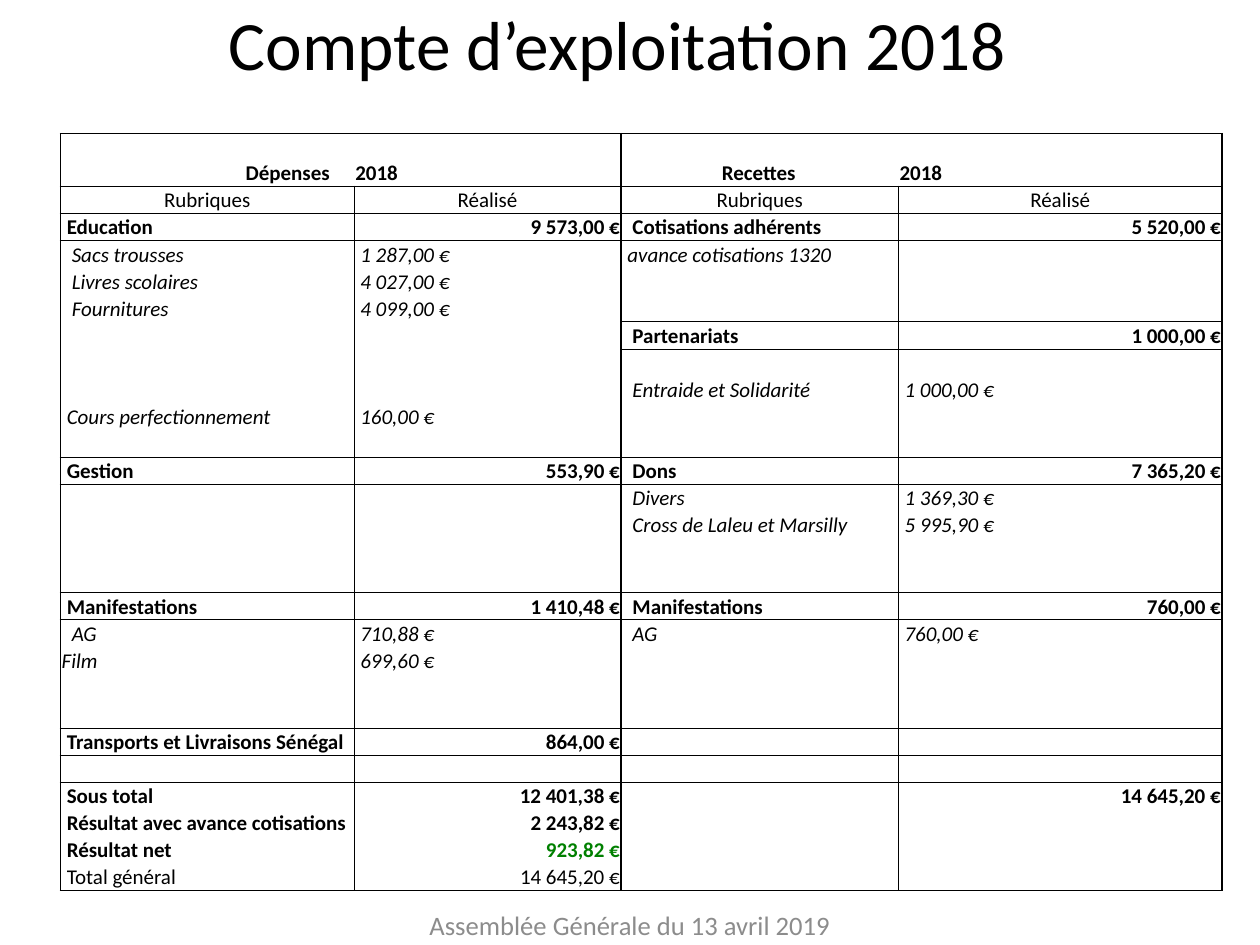
"""Build the 2018 operating account slide of the association."""

from dataclasses import dataclass
from enum import Enum
from itertools import chain
from typing import Optional

from lxml.etree import SubElement
from pptx import Presentation
from pptx.dml.color import RGBColor
from pptx.enum.text import MSO_ANCHOR as Anchor, PP_ALIGN as Align
from pptx.oxml.ns import qn
from pptx.util import Inches, Pt

BLACK = RGBColor(0x00, 0x00, 0x00)
GREY = RGBColor(0x8C, 0x8C, 0x8C)
GREEN = RGBColor(0x00, 0x80, 0x00)
FONT = "Calibri"
BODY_SIZE = 12
WIDTH, HEIGHT = Inches(10), Inches(7.5)
INDENT_STEP = 0.04
OUTER_LINE, INNER_LINE = 1, 0.5
COLUMN_SHARES = (23.3, 21.2, 22, 25.7)
HEADING_SHARE, ENTRY_SHARE = 5.6, 2.87


class Kind(Enum):
    HEADING = "heading"
    COLUMNS = "columns"
    SECTION = "section"
    DETAIL = "detail"
    TOTAL = "total"
    GRAND_TOTAL = "grand total"


RULED = {Kind.COLUMNS, Kind.SECTION}
BOLD = {Kind.HEADING, Kind.SECTION, Kind.TOTAL}


@dataclass(frozen=True)
class Entry:
    kind: Kind = Kind.DETAIL
    label: str = ""
    amount: str = ""
    indent: float = 2
    colour: RGBColor = BLACK


@dataclass(frozen=True)
class Caption:
    text: str
    area: tuple[float, float, float, float]
    size: float
    colour: RGBColor
    anchor: Anchor


BLANK = Entry()
RULED_BLANK = Entry(Kind.SECTION)
COLUMN_NAMES = Entry(Kind.COLUMNS, "Rubriques", "Réalisé", 0)

EXPENSES = [
    Entry(Kind.HEADING, "Dépenses", "2018", 36.5),
    COLUMN_NAMES,
    Entry(Kind.SECTION, "Education", "9 573,00 €", 1),
    Entry(Kind.DETAIL, "Sacs trousses", "1 287,00 €"),
    Entry(Kind.DETAIL, "Livres scolaires", "4 027,00 €"),
    Entry(Kind.DETAIL, "Fournitures", "4 099,00 €"),
    *[BLANK] * 3,
    Entry(Kind.DETAIL, "Cours perfectionnement", "160,00 €", 1),
    BLANK,
    Entry(Kind.SECTION, "Gestion", "553,90 €", 1),
    *[BLANK] * 4,
    Entry(Kind.SECTION, "Manifestations", "1 410,48 €", 1),
    Entry(Kind.DETAIL, "AG", "710,88 €"),
    Entry(Kind.DETAIL, "Film", "699,60 €", 0),
    *[BLANK] * 2,
    Entry(Kind.SECTION, "Transports et Livraisons Sénégal", "864,00 €", 1),
    RULED_BLANK,
    Entry(Kind.TOTAL, "Sous total", "12 401,38 €", 1),
    Entry(Kind.TOTAL, "Résultat avec avance cotisations", "2 243,82 €", 1),
    Entry(Kind.TOTAL, "Résultat net", "923,82 €", 1, GREEN),
    Entry(Kind.GRAND_TOTAL, "Total général", "14 645,20 €", 1),
]

INCOME = [
    Entry(Kind.HEADING, "Recettes", "2018", 19.75),
    COLUMN_NAMES,
    Entry(Kind.SECTION, "Cotisations adhérents", "5 520,00 €"),
    Entry(Kind.DETAIL, "avance cotisations 1320", "", 1),
    *[BLANK] * 2,
    Entry(Kind.SECTION, "Partenariats", "1 000,00 €"),
    BLANK,
    Entry(Kind.DETAIL, "Entraide et Solidarité", "1 000,00 €"),
    *[BLANK] * 2,
    Entry(Kind.SECTION, "Dons", "7 365,20 €"),
    Entry(Kind.DETAIL, "Divers", "1 369,30 €"),
    Entry(Kind.DETAIL, "Cross de Laleu et Marsilly", "5 995,90 €"),
    *[BLANK] * 2,
    Entry(Kind.SECTION, "Manifestations", "760,00 €"),
    Entry(Kind.DETAIL, "AG", "760,00 €"),
    *[BLANK] * 3,
    *[RULED_BLANK] * 2,
    Entry(Kind.TOTAL, "", "14 645,20 €"),
    *[BLANK] * 3,
]

CAPTIONS = [
    Caption("Compte d’exploitation 2018", (6.5, 0, 85, 9), 39.6, BLACK, Anchor.MIDDLE),
    Caption("Assemblée Générale du 13 avril 2019", (15, 95.5, 70, 4.3), 15.2, GREY, Anchor.TOP),
]


def across(percent: float) -> int:
    """Return a percentage of the slide's width."""
    return int(WIDTH * percent / 100)


def down(percent: float) -> int:
    """Return a percentage of the slide's height."""
    return int(HEIGHT * percent / 100)


def add_run(paragraph, text: str, size: float, colour: RGBColor,
            bold: bool = False, italic: bool = False) -> None:
    """Append one formatted run to a paragraph."""
    run = paragraph.add_run()
    run.text = text
    font = run.font
    font.name, font.size, font.bold, font.italic = FONT, Pt(size), bold, italic
    font.color.rgb = colour


def add_caption(slide, caption: Caption) -> None:
    """Draw a centred line of text."""
    left, top, width, height = caption.area
    box = slide.shapes.add_textbox(across(left), down(top), across(width), down(height))
    frame = box.text_frame
    frame.word_wrap = True
    frame.vertical_anchor = caption.anchor
    paragraph = frame.paragraphs[0]
    paragraph.alignment = Align.CENTER
    add_run(paragraph, caption.text, caption.size, caption.colour)


def set_border(cell, side: str, points: Optional[float]) -> None:
    """Rule one side of a cell, or clear it when no width is given."""
    line = SubElement(cell._tc.get_or_add_tcPr(), qn(f"a:ln{side}"))
    if not points:
        SubElement(line, qn("a:noFill"))
        return
    line.set("w", str(Pt(points)))
    fill = SubElement(line, qn("a:solidFill"))
    SubElement(fill, qn("a:srgbClr")).set("val", str(BLACK))


def rule_width(entries: list[Entry], row: int) -> Optional[float]:
    """Return the width of the rule above a row, the end of the table included."""
    if row in (0, 1, len(entries)):
        return OUTER_LINE
    touching = {entry.kind for entry in entries[row - 1:row + 1]}
    return INNER_LINE if touching & RULED else None


def fill_cell(cell, entry: Entry, is_amount: bool) -> None:
    """Write the label or the amount of an entry into its cell."""
    cell.margin_left = cell.margin_right = cell.margin_top = Inches(0.01)
    cell.margin_bottom = 0
    cell.vertical_anchor = Anchor.BOTTOM
    paragraph = cell.text_frame.paragraphs[0]
    text = entry.amount if is_amount else entry.label
    if not text:
        SubElement(paragraph._p, qn("a:endParaRPr")).set("sz", str(BODY_SIZE * 100))
        return
    indent = entry.indent
    if is_amount:
        indent = 1 if entry.kind is Kind.DETAIL else 0
    if entry.kind is Kind.COLUMNS:
        paragraph.alignment = Align.CENTER
    elif is_amount and entry.kind not in (Kind.HEADING, Kind.DETAIL):
        paragraph.alignment = Align.RIGHT
    else:
        paragraph.alignment = Align.LEFT
        paragraph._p.get_or_add_pPr().set("marL", str(Inches(indent * INDENT_STEP)))
    add_run(paragraph, text, BODY_SIZE, entry.colour if is_amount else BLACK,
            entry.kind in BOLD, entry.kind is Kind.DETAIL)


def add_account(slide) -> None:
    """Draw the table of expenses and income side by side."""
    heights = [HEADING_SHARE] + [ENTRY_SHARE] * (len(EXPENSES) - 1)
    table = slide.shapes.add_table(
        len(heights), len(COLUMN_SHARES), across(4.8), down(14.13),
        across(sum(COLUMN_SHARES)), down(sum(heights))).table
    table.first_row = table.horz_banding = False
    for column, share in zip(table.columns, COLUMN_SHARES):
        column.width = across(share)
    for table_row, share in zip(table.rows, heights):
        table_row.height = down(share)
    halves = ((half, row, entries) for half, entries in enumerate((EXPENSES, INCOME))
              for row in range(len(entries)))
    for half, row, entries in halves:
        entry = entries[row]
        middle = None if entry.kind is Kind.HEADING else INNER_LINE
        for is_amount in (False, True):
            cell = table.cell(row, 2 * half + is_amount)
            fill_cell(cell, entry, is_amount)
            edges = (middle, OUTER_LINE) if is_amount else (OUTER_LINE, middle)
            rules = (rule_width(entries, row), rule_width(entries, row + 1))
            for side, points in zip("LRTB", chain(edges, rules)):
                set_border(cell, side, points)
            cell.fill.background()


def main() -> None:
    """Build the slide and save it."""
    deck = Presentation()
    deck.slide_width, deck.slide_height = WIDTH, HEIGHT
    slide = deck.slides.add_slide(deck.slide_layouts[6])
    for caption in CAPTIONS:
        add_caption(slide, caption)
    add_account(slide)
    deck.save("out.pptx")


if __name__ == "__main__":
    main()
